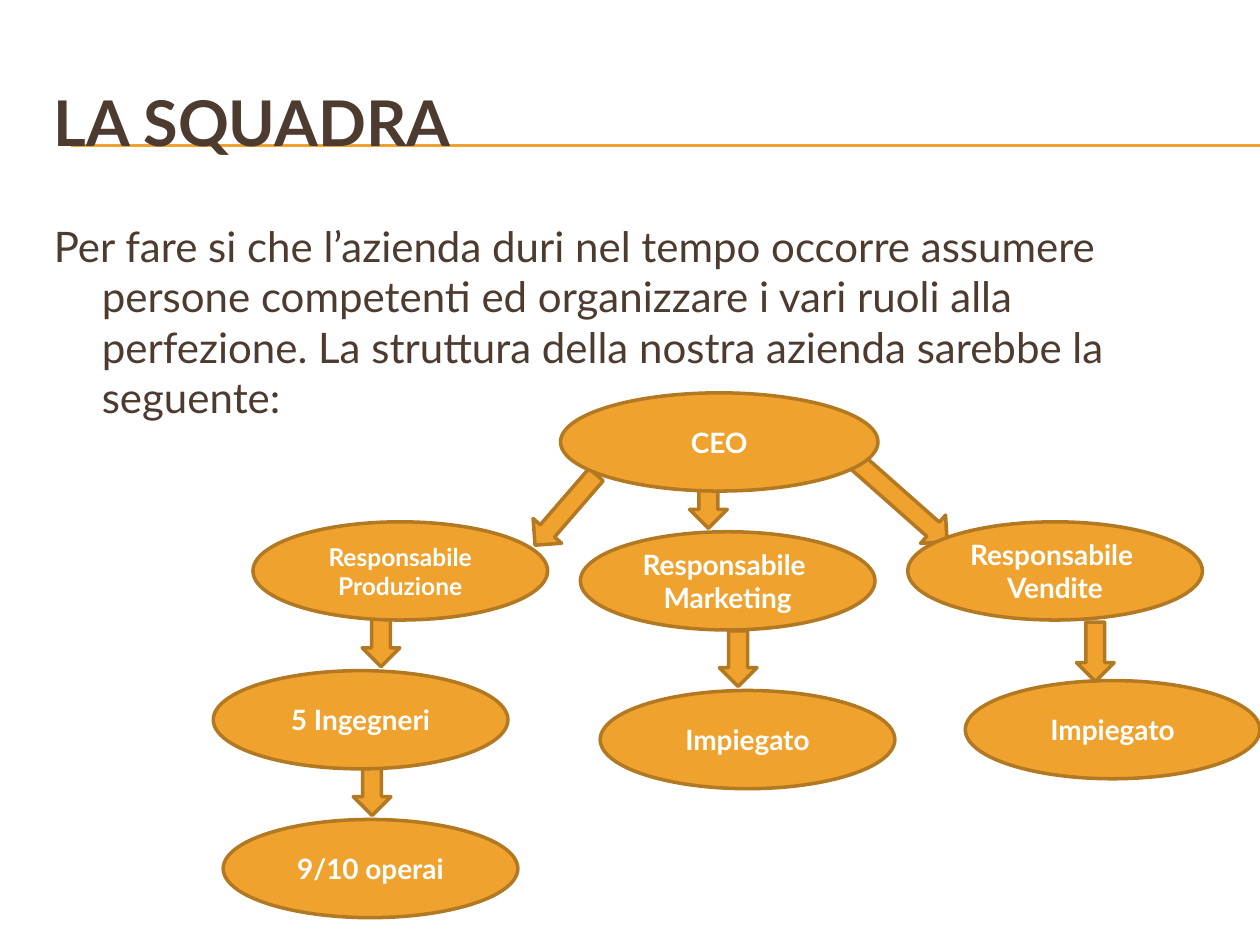
"""Builds the team slide: a title, an introduction and the company's organisation chart."""
from pptx import Presentation
from pptx.dml.color import RGBColor
from pptx.enum.shapes import MSO_CONNECTOR as Connector, MSO_SHAPE as Shape
from pptx.enum.text import MSO_ANCHOR as Anchor, PP_ALIGN as Align
from pptx.oxml.ns import qn
from pptx.util import Inches, Pt
from lxml.etree import SubElement

COLORS = {name: RGBColor.from_string(value) for name, value in {
    "orange": "F0A22E", "edge": "B27822", "brown": "4E3B30", "white": "FFFFFF",
}.items()}
FONT = "Lato"

deck = Presentation()
deck.slide_width, deck.slide_height = Inches(10), Inches(7.5)
page = deck.slides.add_slide(deck.slide_layouts[6])
width, height = deck.slide_width, deck.slide_height
unit = width / 127


def add_box(kind, col, row, cols, rows):
    box = page.shapes.add_shape(kind, *(round(n * unit) for n in (col, row, cols, rows)))
    box.shadow.inherit = False
    box.fill.solid()
    box.fill.fore_color.rgb = COLORS["orange"]
    box.line.color.rgb = COLORS["edge"]
    box.line.width = Pt(2)
    return box


def write(para, text, size, color, bold):
    span = para.add_run()
    span.text = text
    span.font.name = FONT
    span.font.size = Pt(size)
    span.font.bold = bold
    span.font.color.rgb = COLORS[color]


for level in (1.15, 1.16):
    rule = page.shapes.add_connector(
        Connector.STRAIGHT, Inches(0.56), Inches(level), width, Inches(level))
    rule.line.color.rgb = COLORS["orange"]
    rule.line.width = Pt(0.75)
    SubElement(rule._element.spPr, qn("a:effectLst"))

arrow_rows = 3.8
back_arrows = [
    (37.5, 79.4, 5.6, 90),
    (38.4, 64.4, 5.6, 90),
    (90.6, 50.3, 13, 41.5),
    (71.4, 50.9, 4.7, 90),
    (57, 51.4, 9.4, 130.9),
]
front_arrows = [(74.4, 66.4, 5.6, 90), (110.4, 65.7, 6, 90)]
roles = [
    (56.5, 39.6, 32, 16, ["CEO"]),
    (25.5, 52.6, 29.7, 14, ["Responsabile Produzione"]),
    (58.5, 53.6, 29.7, 16, ["Responsabile ", "Marketing"]),
    (91.5, 52.6, 29.7, 16, ["Responsabile ", "Vendite"]),
    (21.5, 67.6, 29.7, 16, ["5 Ingegneri"]),
    (22.5, 82.6, 29.7, 16, ["9/10 operai"]),
    (60.5, 69.6, 29.7, 16, ["Impiegato"]),
    (97.3, 68.6, 29.7, 16, ["Impiegato"]),
]
texts = [
    (0.5, 0.92, Anchor.MIDDLE, 36, True, "LA SQUADRA"),
    (1.7, 4.95, Anchor.TOP, 24, False,
     "Per fare si che l’azienda duri nel tempo occorre assumere persone competenti ed "
     "organizzare i vari ruoli alla perfezione. La struttura della nostra azienda "
     "sarebbe la seguente:"),
]

for top, tall, anchor, size, bold, text in texts:
    box = page.shapes.add_textbox(
        round(width * 0.033), Inches(top), round(width * 0.95), Inches(tall))
    frame = box.text_frame
    frame.word_wrap = True
    frame.vertical_anchor = anchor
    write(frame.paragraphs[0], text, size, "brown", bold)

intro = frame.paragraphs[0]
intro.space_before = Pt(4.8)
indents = intro._p.get_or_add_pPr()
indents.set("marL", str(Inches(0.38)))
indents.set("indent", str(-Inches(0.38)))

for layer, ovals in ((back_arrows, roles), (front_arrows, [])):
    for col, row, length, angle in layer:
        arrow = add_box(Shape.RIGHT_ARROW, col - length / 2, row - arrow_rows / 2,
                        length, arrow_rows)
        arrow.rotation = angle
    for col, row, cols, size, lines in ovals:
        frame = add_box(Shape.OVAL, col, row, cols, 9.9).text_frame
        frame.word_wrap = True
        frame.vertical_anchor = Anchor.MIDDLE
        for index, line in enumerate(lines):
            para = frame.add_paragraph() if index else frame.paragraphs[0]
            para.alignment = Align.CENTER
            write(para, line, size, "white", True)

deck.save("out.pptx")
